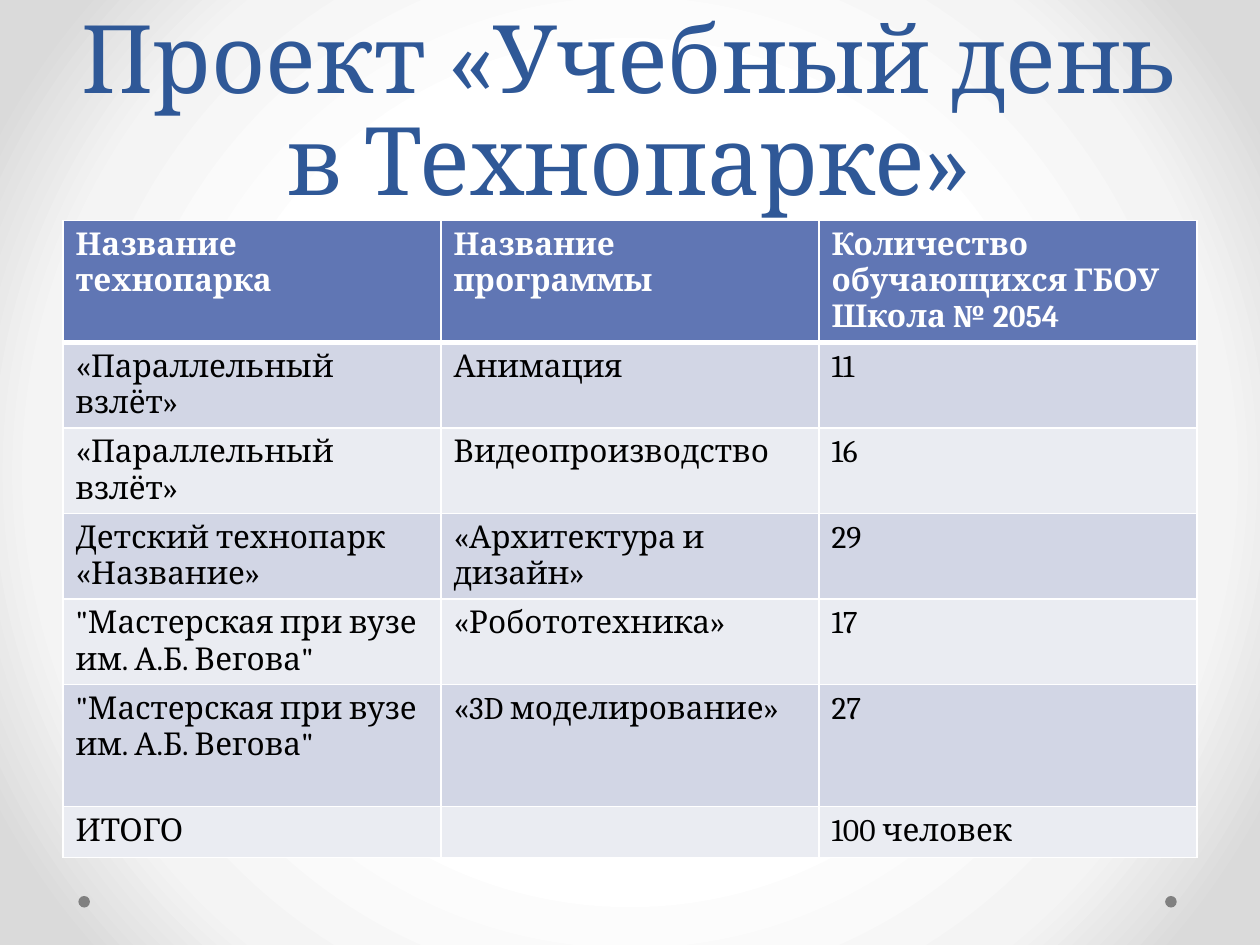
from pptx import Presentation
from pptx.dml.color import RGBColor
from pptx.enum.shapes import MSO_SHAPE
from pptx.enum.text import MSO_ANCHOR, PP_ALIGN
from pptx.oxml import parse_xml
from pptx.oxml.ns import nsdecls
from pptx.util import Pt

FONT = "Cambria"
STOPS = [(50, "FFFFFF"), (76, "F4F4F4"), (92, "DADADA")]
HEADER = ["Название технопарка", "Название программы",
          "Количество обучающихся ГБОУ Школа № 2054"]
PROGRAMS = [
    ["«Параллельный взлёт»", "Анимация", "11"],
    ["«Параллельный взлёт»", "Видеопроизводство", "16"],
    ["Детский технопарк «Название»", "«Архитектура и дизайн»", "29"],
    ['"Мастерская при вузе им. А.Б. Вегова"', "«Робототехника»", "17"],
    ['"Мастерская при вузе им. А.Б. Вегова"', "«3D моделирование»", "27"],
    ["ИТОГО", "", "100 человек"],
]
ROW_HEIGHTS = [69.7, 48.9, 48.9, 48.9, 48.9, 69.7, 29.2]


def color(value):
    """Return the colour for a hex string."""
    return RGBColor.from_string(value)


def style_font(font, size, value, bold=False):
    """Set face, size, colour and weight of a font."""
    font.name, font.size, font.bold = FONT, Pt(size), bold
    font.color.rgb = color(value)


def add_background(s):
    """Fill the slide with a radial gradient that darkens outwards."""
    stops = "".join(f'<a:gs pos="{pos * 1000}"><a:srgbClr val="{value}"/></a:gs>'
                    for pos, value in STOPS)
    s.element.cSld.insert(0, parse_xml(
        f'<p:bg {nsdecls("p", "a")}><p:bgPr><a:gradFill rotWithShape="1">'
        f'<a:gsLst>{stops}</a:gsLst><a:path path="circle">'
        '<a:fillToRect l="50000" t="50000" r="50000" b="50000"/></a:path>'
        '</a:gradFill><a:effectLst/></p:bgPr></p:bg>'))


def add_dots(s, left, top, width, size):
    """Place a grey dot at each end of the given strip."""
    for x in (left, left + width - size):
        sp = s.shapes.add_shape(MSO_SHAPE.OVAL, Pt(x), Pt(top), Pt(size), Pt(size))
        sp.shadow.inherit = False
        sp.fill.solid()
        sp.fill.fore_color.rgb = color("808080")
        sp.line.fill.background()


def add_title(s, left, top, width, height, text):
    """Move the title placeholder into the box and format it."""
    sp = s.shapes.title
    sp.left, sp.top, sp.width, sp.height = Pt(left), Pt(top), Pt(width), Pt(height)
    tf = sp.text_frame
    tf.text, tf.word_wrap, tf.vertical_anchor = text, True, MSO_ANCHOR.BOTTOM
    p = tf.paragraphs[0]
    p.alignment, p.line_spacing = PP_ALIGN.CENTER, Pt(58)
    style_font(p.font, 54, "2F5897")


def set_borders(cell, top, bottom):
    """Draw white borders, with the top and bottom widths in points."""
    tc_pr = cell._tc.get_or_add_tcPr()
    widths = {"lnL": 1, "lnR": 1, "lnT": top, "lnB": bottom}
    for i, (side, width) in enumerate(widths.items()):
        tc_pr.insert(i, parse_xml(
            f'<a:{side} {nsdecls("a")} w="{Pt(width)}"><a:solidFill>'
            f'<a:srgbClr val="FFFFFF"/></a:solidFill></a:{side}>'))


def add_program_table(s, left, top, width, rows):
    """Add the table of programmes with a header and banded rows."""
    table = s.shapes.add_table(len(rows), len(rows[0]), Pt(left), Pt(top),
                               Pt(width), Pt(sum(ROW_HEIGHTS))).table
    for i, values in enumerate(rows):
        table.rows[i].height = Pt(ROW_HEIGHTS[i])
        is_header = i == 0
        fill = "6076B4" if is_header else ("EAECF2", "D2D6E5")[i % 2]
        for j, text in enumerate(values):
            cell = table.cell(i, j)
            cell.text = text
            cell.fill.solid()
            cell.fill.fore_color.rgb = color(fill)
            style_font(cell.text_frame.paragraphs[0].font, 18,
                       "FFFFFF" if is_header else "000000", is_header)
            set_borders(cell, 3 if i == 1 else 1, 3 if is_header else 1)


def main():
    """Build the slide and save it."""
    prs = Presentation()
    prs.slide_width, prs.slide_height = Pt(720), Pt(540)
    s = prs.slides.add_slide(prs.slide_layouts[5])
    add_background(s)
    add_dots(s, 44.8, 512, 627.6, 6.6)
    add_title(s, 36, 0, 648, 126, "Проект «Учебный день в Технопарке»")
    add_program_table(s, 36, 126, 648, [HEADER, *PROGRAMS])
    prs.save("out.pptx")


if __name__ == "__main__":
    main()
